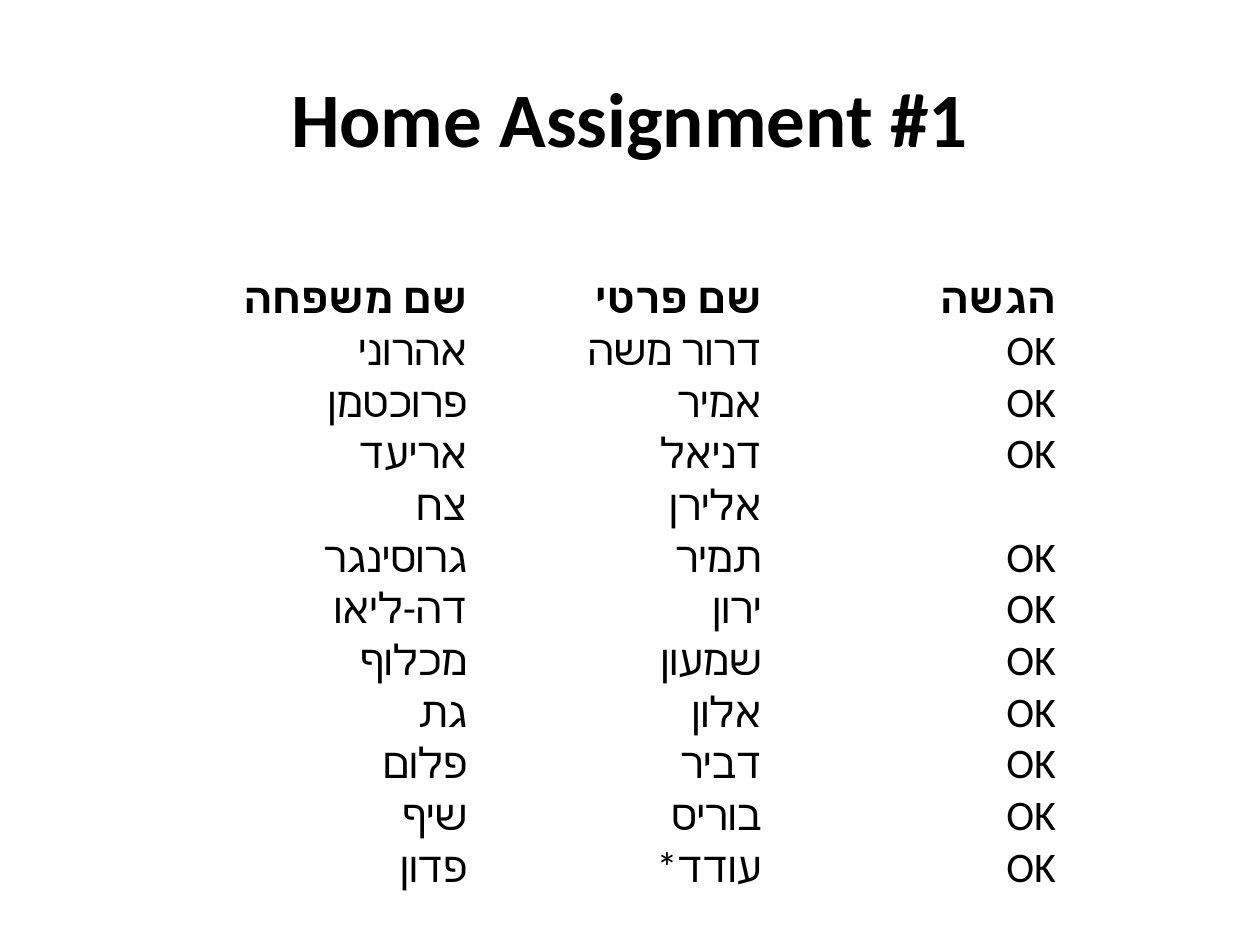
from lxml import etree
from pptx import Presentation
from pptx import util as u
from pptx.dml.color import RGBColor
from pptx.enum import text
from pptx.oxml.ns import qn

COLORS = {"text": "000000", "page": "FFFFFF"}
FONT = "Calibri"
WIDTH, HEIGHT = u.Inches(10), u.Inches(7.5)
ROWS = [
    ("שם משפחה", "שם פרטי", "הגשה"),
    ("אהרוני", "דרור משה", "OK"),
    ("פרוכטמן", "אמיר", "OK"),
    ("אריעד", "דניאל", "OK"),
    ("צח", "אלירן", ""),
    ("גרוסינגר", "תמיר", "OK"),
    ("דה-ליאו", "ירון", "OK"),
    ("מכלוף", "שמעון", "OK"),
    ("גת", "אלון", "OK"),
    ("פלום", "דביר", "OK"),
    ("שיף", "בוריס", "OK"),
    ("פדון", "עודד*", "OK"),
]


def share_box(left, top, width, height):
    """Turn shares of the slide's size into a box of lengths."""
    return int(left * WIDTH), int(top * HEIGHT), int(width * WIDTH), int(height * HEIGHT)


def write(tf, words, size=24, bold=False, align=text.PP_ALIGN.RIGHT, rtl=False):
    """Write one formatted paragraph into a text frame."""
    p = tf.paragraphs[0]
    p.alignment = align
    if rtl:
        p._p.get_or_add_pPr().set("rtl", "1")
    if not words:
        return
    r = p.add_run()
    r.text = words
    r.font.name, r.font.size, r.font.bold = FONT, u.Pt(size), bold
    r.font.color.rgb = RGBColor.from_string(COLORS["text"])
    etree.SubElement(r._r.get_or_add_rPr(), qn("a:cs")).set("typeface", FONT)


def add_title(s, box, words):
    """Place the centred title in its box."""
    tf = s.shapes.add_textbox(*box).text_frame
    tf.word_wrap = True
    tf.vertical_anchor = text.MSO_ANCHOR.MIDDLE
    write(tf, words, size=44, bold=True, align=text.PP_ALIGN.CENTER)


def add_submissions(s, box, rows, header_share=0.123):
    """Place the plain right-to-left table, with a taller header row."""
    height = box[3]
    table = s.shapes.add_table(len(rows), len(rows[0]), *box).table
    table.first_row = table.horz_banding = False
    header = int(height * header_share)
    for i, words in enumerate(rows):
        table.rows[i].height = (height - header) // (len(rows) - 1) if i else header
        for j, word in enumerate(words):
            cell = table.cell(i, j)
            cell.fill.background()
            cell.vertical_anchor = text.MSO_ANCHOR.BOTTOM
            cell.margin_left = cell.margin_right = cell.margin_top = u.Inches(0.01)
            cell.margin_bottom = 0
            write(cell.text_frame, word, bold=i == 0, rtl=True)


def main():
    """Build and save the slide."""
    prs = Presentation()
    prs.slide_width, prs.slide_height = WIDTH, HEIGHT
    s = prs.slides.add_slide(prs.slide_layouts[6])
    s.background.fill.solid()
    s.background.fill.fore_color.rgb = RGBColor.from_string(COLORS["page"])
    add_title(s, share_box(0.05, 0.04, 0.9, 1 / 6), "Home Assignment #1")
    add_submissions(s, share_box(0.138, 0.259, 0.701, 0.685), ROWS)
    prs.save("out.pptx")


if __name__ == "__main__":
    main()
